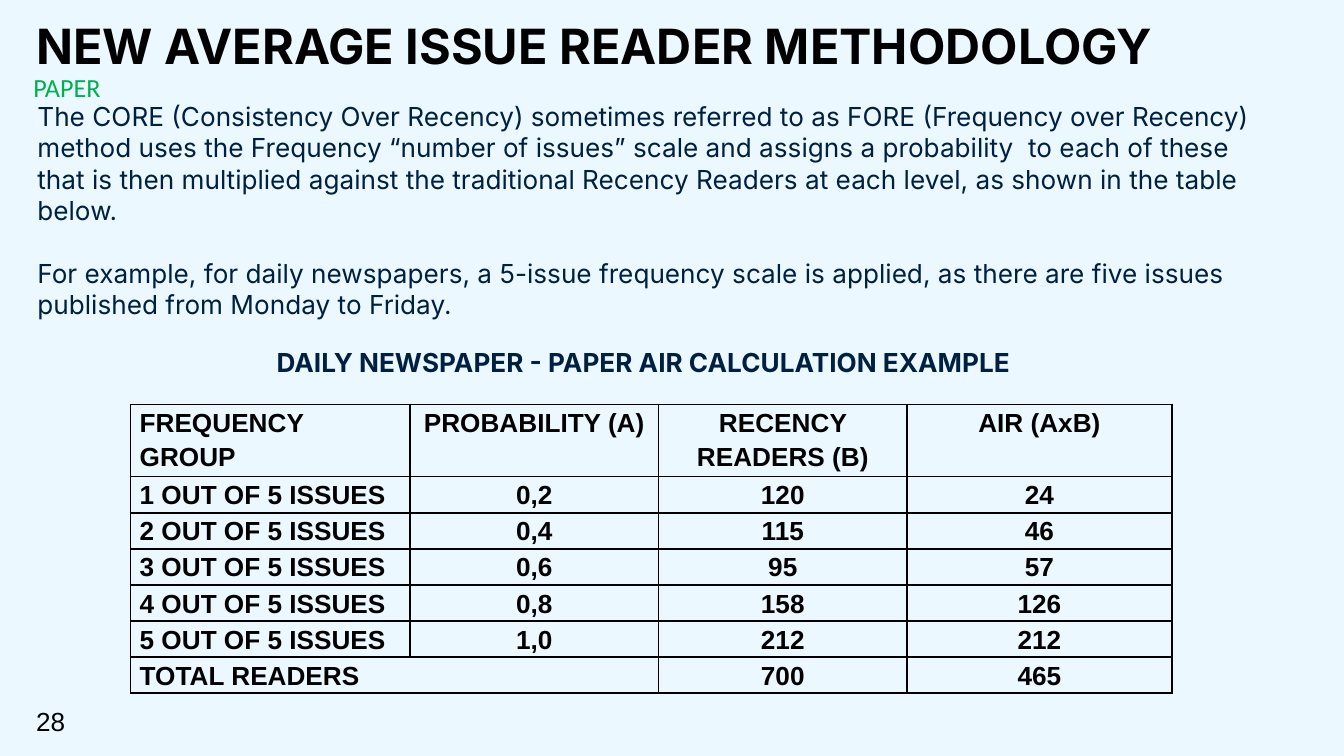
"""Build a slide explaining the average issue reader methodology."""
from pptx import Presentation
from pptx.dml.color import RGBColor
from pptx.enum.text import MSO_ANCHOR, PP_ALIGN
from pptx.oxml.ns import qn
from pptx.util import Pt
from lxml.etree import SubElement

COLORS = {"background": "EBF8FF", "black": "000000", "navy": "002041", "green": "00B050"}

BODY = [
    "The CORE (Consistency Over Recency) sometimes referred to as FORE (Frequency over Recency) "
    "method uses the Frequency “number of issues” scale and assigns a probability  to each of these "
    "that is then multiplied against the traditional Recency Readers at each level, as shown in the "
    "table below.",
    "For example, for daily newspapers, a 5-issue frequency scale is applied, as there are five "
    "issues published from Monday to Friday.",
]
HEADERS = ["FREQUENCY GROUP", "PROBABILITY (A)", "RECENCY READERS (B)", "AIR (AxB)"]
READERS = [("0,2", "120", "24"), ("0,4", "115", "46"), ("0,6", "95", "57"),
           ("0,8", "158", "126"), ("1,0", "212", "212")]
TOTALS = ["TOTAL READERS", "", "700", "465"]
COLUMN_WIDTHS = [149.76, 133.2, 133.2, 141.84]
HEADER_HEIGHT, ROW_HEIGHT = 36, 18.1


def write_text(tf, paragraphs, size=14, font="Arial", color="black", bold=False,
               align=PP_ALIGN.LEFT, line_spacing=None, gap=0, indent=0):
    for i, text in enumerate(paragraphs):
        p = tf.paragraphs[0] if i == 0 else tf.add_paragraph()
        p.alignment = align
        p.line_spacing = line_spacing
        if i:
            p.space_before = Pt(gap)
        if indent:
            p._p.get_or_add_pPr().set("marL", str(Pt(indent)))
        r = p.add_run()
        r.text = text
        r.font.size, r.font.name, r.font.bold = Pt(size), font, bold
        r.font.color.rgb = RGBColor.from_string(COLORS[color])


def add_text(s, box, paragraphs, insets=(7.2, 7.2, 7.2, 7.2), anchor=MSO_ANCHOR.TOP, **text_format):
    tf = s.shapes.add_textbox(*map(Pt, box)).text_frame
    tf.word_wrap = True
    tf.vertical_anchor = anchor
    tf.margin_left, tf.margin_top, tf.margin_right, tf.margin_bottom = map(Pt, insets)
    write_text(tf, paragraphs, **text_format)


def add_borders(cell):
    tc_pr = cell._tc.get_or_add_tcPr()
    for side in ("a:lnL", "a:lnR", "a:lnT", "a:lnB"):
        line = SubElement(tc_pr, qn(side), w=str(Pt(1)))
        fill = SubElement(line, qn("a:solidFill"))
        SubElement(fill, qn("a:srgbClr"), val=COLORS["black"])


def format_cell(cell, text, align):
    add_borders(cell)
    cell.fill.background()
    cell.margin_left = cell.margin_right = Pt(5)
    cell.margin_top = cell.margin_bottom = 0
    if text:
        write_text(cell.text_frame, [text], bold=True, align=align, line_spacing=1.15)


def add_readers_table(s, left, top):
    groups = [[f"{n} OUT OF 5 ISSUES", *values] for n, values in enumerate(READERS, 1)]
    rows = [HEADERS, *groups, TOTALS]
    heights = [HEADER_HEIGHT] + [ROW_HEIGHT] * (len(rows) - 1)
    table = s.shapes.add_table(len(rows), len(HEADERS), Pt(left), Pt(top),
                               Pt(sum(COLUMN_WIDTHS)), Pt(sum(heights))).table
    table.first_row = table.horz_banding = False
    for column, width in zip(table.columns, COLUMN_WIDTHS):
        column.width = Pt(width)
    for i, (values, height) in enumerate(zip(rows, heights)):
        table.rows[i].height = Pt(height)
        for j, value in enumerate(values):
            format_cell(table.cell(i, j), value, PP_ALIGN.CENTER if j else PP_ALIGN.LEFT)
    last = len(rows) - 1
    table.cell(last, 0).merge(table.cell(last, 1))


def main():
    prs = Presentation()
    prs.slide_width, prs.slide_height = Pt(720), Pt(405)
    s = prs.slides.add_slide(prs.slide_layouts[6])
    s.background.fill.solid()
    s.background.fill.fore_color.rgb = RGBColor.from_string(COLORS["background"])

    add_text(s, (0, 33.12, 732.96, 29.52), ["PAPER"], font="Calibri", color="green",
             line_spacing=0.9, indent=10.8)
    add_text(s, (12.24, 378, 36, 16.56), ["28"], anchor=MSO_ANCHOR.MIDDLE)
    add_text(s, (12.24, 1.44, 748.8, 45.36), ["NEW AVERAGE ISSUE READER METHODOLOGY"],
             size=26, font="Inter", bold=True)
    add_readers_table(s, 69.84, 216.72)
    add_text(s, (12.96, 58.32, 671.04, 115.2), BODY, insets=(7.2, 3.6, 7.2, 10.08),
             anchor=MSO_ANCHOR.MIDDLE, font="Inter", color="navy", gap=17)
    add_text(s, (141.12, 182.16, 459.36, 24.48),
             ["DAILY NEWSPAPER - PAPER AIR CALCULATION EXAMPLE"], insets=(7.2, 3.6, 7.2, 3.6),
             font="Inter", color="navy", bold=True)
    prs.save("out.pptx")


if __name__ == "__main__":
    main()
